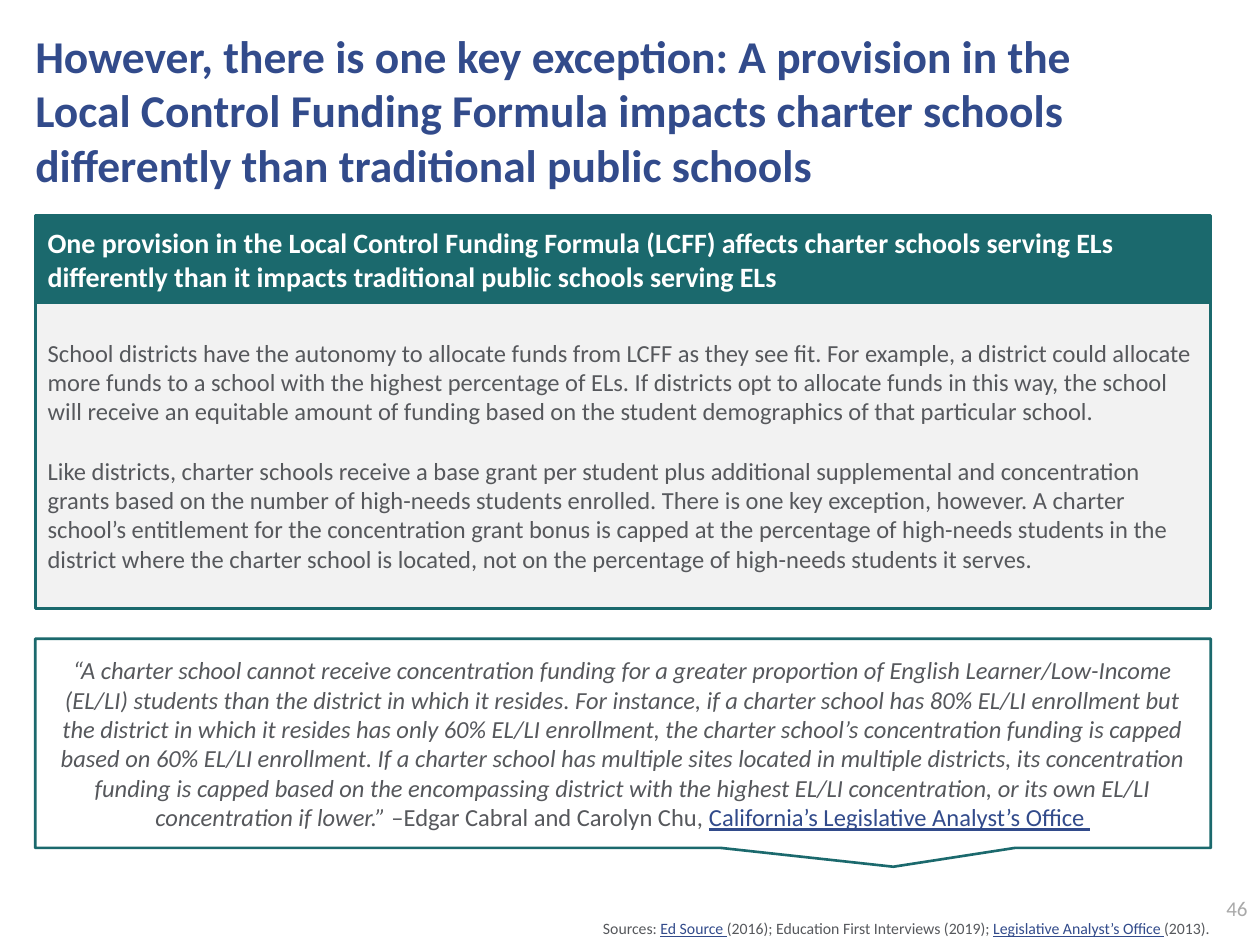
import pptx
import pptx.util
import pptx.dml.color
import pptx.enum.shapes
import pptx.enum.text

Inches = pptx.util.Inches
Pt = pptx.util.Pt
RGBColor = pptx.dml.color.RGBColor
MSO_SHAPE = pptx.enum.shapes.MSO_SHAPE
MSO_ANCHOR = pptx.enum.text.MSO_ANCHOR
PP_ALIGN = pptx.enum.text.PP_ALIGN

FONT = "Calibri"
NAVY = RGBColor(0x32, 0x4B, 0x8B)
TEAL = RGBColor(0x1B, 0x69, 0x6D)
PALE = RGBColor(0xF2, 0xF2, 0xF2)
WHITE = RGBColor(0xFF, 0xFF, 0xFF)
TEXT_GRAY = RGBColor(0x56, 0x58, 0x5C)
NUMBER_GRAY = RGBColor(0xA9, 0xA9, 0xA9)

LEFT = 0.28
WIDTH = 9.33

TITLE = (
    "However, there is one key exception: A provision in the Local Control "
    "Funding Formula impacts charter schools differently than traditional "
    "public schools"
)
HEADING = (
    "One provision in the Local Control Funding Formula (LCFF) affects charter "
    "schools serving ELs differently than it impacts traditional public schools "
    "serving ELs"
)
EXPLANATION = [
    "School districts have the autonomy to allocate funds from LCFF as they see "
    "fit. For example, a district could allocate more funds to a school with the "
    "highest percentage of ELs. If districts opt to allocate funds in this way, "
    "the school will receive an equitable amount of funding based on the student "
    "demographics of that particular school.",
    "Like districts, charter schools receive a base grant per student plus "
    "additional supplemental and concentration grants based on the number of "
    "high-needs students enrolled. There is one key exception, however. A charter "
    "school’s entitlement for the concentration grant bonus is capped at the "
    "percentage of high-needs students in the district where the charter school "
    "is located, not on the percentage of high-needs students it serves.",
]
QUOTE = (
    "“A charter school cannot receive concentration funding for a greater "
    "proportion of English Learner/Low-Income (EL/LI) students than the district "
    "in which it resides. For instance, if a charter school has 80% EL/LI "
    "enrollment but the district in which it resides has only 60% EL/LI "
    "enrollment, the charter school’s concentration funding is capped based on "
    "60% EL/LI enrollment. If a charter school has multiple sites located in "
    "multiple districts, its concentration funding is capped based on the "
    "encompassing district with the highest EL/LI concentration, or its own EL/LI "
    "concentration if lower.” "
)
CITED = {"color": NAVY, "underline": True}


def format_font(font, size, color=TEXT_GRAY, bold=False, italic=False, underline=False):
    font.name = FONT
    font.size = Pt(size)
    font.color.rgb = color
    font.bold = bold
    font.italic = italic
    font.underline = underline


def write_runs(paragraph, pieces, size, align=PP_ALIGN.LEFT):
    """Fill a paragraph from (text, font options) pairs."""
    paragraph.alignment = align
    for text, options in pieces:
        run = paragraph.add_run()
        run.text = text
        format_font(run.font, size, **options)


def remove_margins(frame):
    frame.margin_left = frame.margin_right = 0
    frame.margin_top = frame.margin_bottom = 0


def set_title(slide):
    title = slide.shapes.title
    title.left, title.top = Inches(LEFT), Inches(0.22)
    title.width, title.height = Inches(8.72), Inches(1.16)
    frame = title.text_frame
    remove_margins(frame)
    frame.word_wrap = True
    frame.auto_size = pptx.enum.text.MSO_AUTO_SIZE.NONE
    frame.vertical_anchor = MSO_ANCHOR.TOP
    write_runs(frame.paragraphs[0], [(TITLE, {"color": NAVY, "bold": True})], 26)


def add_panel(slide, kind, top, height, fill):
    """Add a teal-outlined panel and return it."""
    panel = slide.shapes.add_shape(
        kind, Inches(LEFT), Inches(top), Inches(WIDTH), Inches(height)
    )
    panel.shadow.inherit = False
    panel.fill.solid()
    panel.fill.fore_color.rgb = fill
    panel.line.color.rgb = TEAL
    panel.line.width = Pt(1.5)
    panel.text_frame.word_wrap = True
    panel.text_frame.vertical_anchor = MSO_ANCHOR.MIDDLE
    return panel


def add_right_note(slide, left, top, width, height, pieces, size):
    box = slide.shapes.add_textbox(
        Inches(left), Inches(top), Inches(width), Inches(height)
    )
    frame = box.text_frame
    frame.word_wrap = True
    frame.vertical_anchor = MSO_ANCHOR.MIDDLE
    write_runs(frame.paragraphs[0], pieces, size, PP_ALIGN.RIGHT)
    return frame


def add_explanation(slide):
    frame = add_panel(slide, MSO_SHAPE.RECTANGLE, 2.4, 2.43, PALE).text_frame
    first = frame.paragraphs[0]
    second = frame.add_paragraph()
    second.space_before = Pt(17)
    for paragraph, text in zip((first, second), EXPLANATION):
        write_runs(paragraph, [(text, {})], 14)


def add_quote(slide):
    callout = add_panel(slide, MSO_SHAPE.RECTANGULAR_CALLOUT, 5.07, 1.66, WHITE)
    callout.adjustments[0] = 0.23
    callout.adjustments[1] = 0.59
    pieces = [
        (QUOTE, {"italic": True}),
        ("–Edgar Cabral and Carolyn Chu, ", {}),
        ("California’s Legislative Analyst’s Office ", CITED),
    ]
    write_runs(callout.text_frame.paragraphs[0], pieces, 14, PP_ALIGN.CENTER)


def main():
    deck = pptx.Presentation()
    deck.slide_width, deck.slide_height = Inches(10), Inches(7.5)
    slide = deck.slides.add_slide(deck.slide_layouts.get_by_name("Title Only"))

    set_title(slide)
    add_right_note(slide, 9.33, 7.06, 0.67, 0.3, [("46", {"color": NUMBER_GRAY})], 12)
    heading = add_panel(slide, MSO_SHAPE.RECTANGLE, 1.71, 0.7, TEAL)
    write_runs(
        heading.text_frame.paragraphs[0],
        [(HEADING, {"color": WHITE, "bold": True})],
        16,
    )
    add_explanation(slide)
    sources = [
        ("Sources: ", {}),
        ("Ed Source ", CITED),
        ("(2016); Education First Interviews (2019); ", {}),
        ("Legislative Analyst’s Office ", CITED),
        ("(2013).", {}),
    ]
    remove_margins(add_right_note(slide, 2.05, 7.18, 7.55, 0.38, sources, 9))
    add_quote(slide)

    deck.save("out.pptx")


if __name__ == "__main__":
    main()
